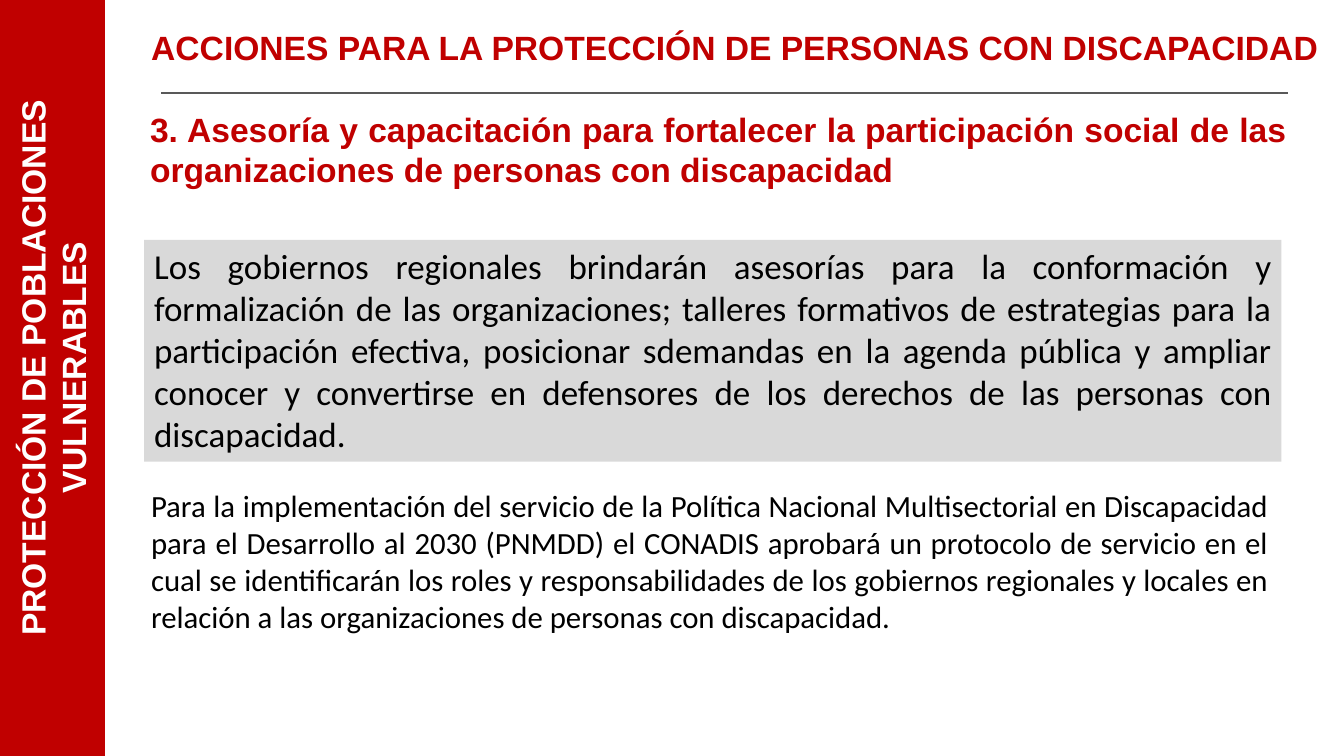
from pptx import Presentation
from pptx import util as u
from pptx.dml.color import RGBColor
from pptx.enum import shapes, text
from pptx.oxml.ns import qn
from lxml import etree

COLORS = {"red": "C00000", "white": "FFFFFF", "black": "000000",
          "panel": "D9D9D9", "rule": "595959"}

deck = Presentation()
deck.slide_width, deck.slide_height = u.Inches(13.33), u.Inches(7.5)
W, H = deck.slide_width, deck.slide_height
slide = deck.slides.add_slide(deck.slide_layouts[5])  # Title Only


def area(left, top, width, height):
    """Turn percentages of the slide's size into lengths."""
    return [int(share * side / 100)
            for share, side in zip((left, top, width, height), (W, H, W, H))]


def write(shape, words, size=24, font="Arial", color="red", bold=False,
          align=text.PP_ALIGN.JUSTIFY, anchor=text.MSO_ANCHOR.TOP,
          wrap=True, margin=0, before=0):
    frame = shape.text_frame
    frame.auto_size = text.MSO_AUTO_SIZE.NONE
    frame.word_wrap, frame.vertical_anchor = wrap, anchor
    paragraph = frame.paragraphs[0]
    paragraph.alignment = align
    paragraph.space_before = u.Pt(before)
    properties = paragraph._p.get_or_add_pPr()
    properties.set("marL", str(u.Inches(margin)))
    properties.set("indent", "0")
    run = paragraph.add_run()
    run.text = words
    run.font.name, run.font.size, run.font.bold = font, u.Pt(size), bold
    run.font.color.rgb = RGBColor.from_string(COLORS[color])


# Heading of the numbered action
action = slide.shapes.add_textbox(*area(9.6, 13.73, 86.87, 12.13))
write(action, "3. Asesoría y capacitación para fortalecer la participación social "
      "de las organizaciones de personas con discapacidad", bold=True, margin=0.11)

# Protocol paragraph
protocol = slide.shapes.add_textbox(*area(10.5, 63.73, 84.62, 21.07))
write(protocol, "Para la implementación del servicio de la Política Nacional "
      "Multisectorial en Discapacidad para el Desarrollo al 2030 (PNMDD) el CONADIS "
      "aprobará un protocolo de servicio en el cual se identificarán los roles y "
      "responsabilidades de los gobiernos regionales y locales en relación a las "
      "organizaciones de personas con discapacidad.",
      size=22, font="Calibri", color="black")

# Red side band, turned to read upwards, and grey panel
band_width = int(W * 0.078)
band_left = (band_width - H) // 2
blocks = []
for place, fill in (((band_left, -band_left, H, band_width), "red"),
                    (area(10.73, 31.73, 84.62, 29.33), "panel")):
    block = slide.shapes.add_shape(shapes.MSO_SHAPE.RECTANGLE, *place)
    block.shadow.inherit = False
    block.fill.solid()
    block.fill.fore_color.rgb = RGBColor.from_string(COLORS[fill])
    block.line.fill.background()
    blocks.append(block)
band, advice = blocks
band.rotation = 270
write(band, "PROTECCIÓN DE POBLACIONES VULNERABLES", color="white", bold=True,
      align=text.PP_ALIGN.CENTER, anchor=text.MSO_ANCHOR.MIDDLE, margin=0.2)
write(advice, "Los gobiernos regionales brindarán asesorías para la conformación y "
      "formalización de las organizaciones; talleres formativos de estrategias para "
      "la participación efectiva, posicionar sdemandas en la agenda pública y ampliar "
      "conocer y convertirse en defensores de los derechos de las personas con "
      "discapacidad.", size=25, font="Calibri", color="black", before=10)

# Title and the rule below it
title = slide.shapes.title
title.left, title.top, title.width, title.height = area(10.5, 2.93, 89.2, 6.67)
write(title, "ACCIONES PARA LA PROTECCIÓN DE PERSONAS CON DISCAPACIDAD", bold=True,
      align=text.PP_ALIGN.LEFT, wrap=False)
rule_left, rule_y, rule_width, _ = area(12, 12.27, 83.8, 0)
rule = slide.shapes.add_connector(shapes.MSO_CONNECTOR.STRAIGHT, rule_left, rule_y,
                                  rule_left + rule_width, rule_y)
rule.line.color.rgb = RGBColor.from_string(COLORS["rule"])
rule.line.width = u.Pt(1.5)
etree.SubElement(rule._element.spPr, qn("a:effectLst"))

deck.save("out.pptx")
